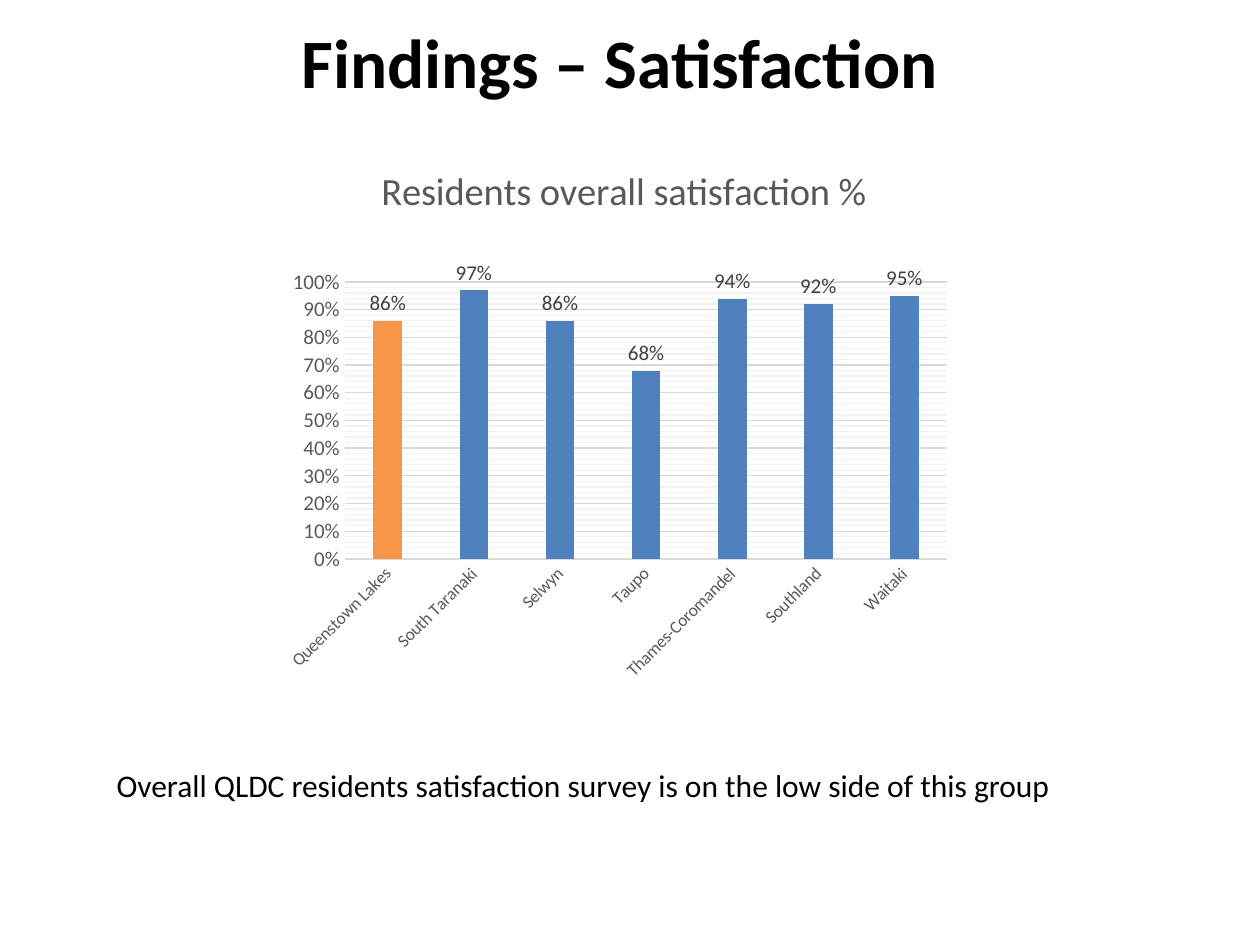
from copy import deepcopy

from lxml import etree
from pptx import Presentation
from pptx import util as u
from pptx.chart import data as chart_data
from pptx.dml.color import RGBColor
from pptx.enum import chart as ch, text
from pptx.oxml import ns

FONT = "Calibri"
HEADING = "Findings – Satisfaction"
REMARK = "Overall QLDC residents satisfaction survey is on the low side of this group"
CHART_TITLE = "Residents overall satisfaction %"
SATISFACTION = {
    "Queenstown Lakes": 0.86,
    "South Taranaki": 0.97,
    "Selwyn": 0.86,
    "Taupo": 0.68,
    "Thames-Coromandel": 0.94,
    "Southland": 0.92,
    "Waitaki": 0.95,
}
HIGHLIGHTED = "Queenstown Lakes"
BAR, HIGHLIGHT = "4F81BD", "F79646"
GREY, LABEL_GREY, GRID, MINOR_GRID = "595959", "404040", "D9D9D9", "F2F2F2"


def rgb(value):
    return RGBColor.from_string(value)


def style_font(font, size, color, bold=False):
    font.name, font.size, font.bold = FONT, u.Pt(size), bold
    font.color.rgb = rgb(color)


def style_line(line, color):
    line.color.rgb = rgb(color)
    line.width = u.Pt(0.75)


def add_text(slide, content, box, size, color="000000", bold=False,
             align=text.PP_ALIGN.LEFT, anchor=text.MSO_ANCHOR.TOP):
    frame = slide.shapes.add_textbox(*map(u.Cm, box)).text_frame
    frame.word_wrap = True
    frame.vertical_anchor = anchor
    paragraph = frame.paragraphs[0]
    paragraph.alignment = align
    run = paragraph.add_run()
    run.text = content
    style_font(run.font, size, color, bold)


def place(parent, position, **settings):
    """Give a chart title or plot area a manual layout, in fractions of the chart."""
    for old in parent.findall(ns.qn("c:layout")):
        parent.remove(old)
    layout = etree.Element(ns.qn("c:layout"))
    manual = etree.SubElement(layout, ns.qn("c:manualLayout"))
    entries = {**settings, "xMode": "edge", "yMode": "edge", **position}
    for key, value in entries.items():
        etree.SubElement(manual, ns.qn(f"c:{key}")).set("val", str(value))
    title_text = parent.find(ns.qn("c:tx"))
    parent.insert(0 if title_text is None else 1, layout)


def style_gridlines(axis, major_color, minor_color):
    axis.has_major_gridlines = axis.has_minor_gridlines = True
    style_line(axis.major_gridlines.format.line, major_color)
    major = axis._element.find(ns.qn("c:majorGridlines"))
    minor = axis._element.find(ns.qn("c:minorGridlines"))
    minor.append(deepcopy(major.find(ns.qn("c:spPr"))))
    for color in minor.iter(ns.qn("a:srgbClr")):
        color.set("val", minor_color)


def add_satisfaction_chart(slide, box):
    data = chart_data.CategoryChartData(number_format="0%")
    data.categories = list(SATISFACTION)
    data.add_series("Series 1", list(SATISFACTION.values()))
    chart = slide.shapes.add_chart(
        ch.XL_CHART_TYPE.COLUMN_CLUSTERED, *map(u.Cm, box), data).chart
    style_font(chart.font, 10, "000000")
    chart.has_legend = False

    chart.has_title = True
    title_run = chart.chart_title.text_frame.paragraphs[0].add_run()
    title_run.text = CHART_TITLE
    style_font(title_run.font, 22, GREY)
    place(chart.chart_title._element, {"x": 0.19, "y": 0.04})

    plot = chart.plots[0]
    plot.gap_width = 199
    plot.vary_by_categories = False
    place(plot._element.getparent(), {"x": 0.15, "y": 0.26, "w": 0.81, "h": 0.49},
          layoutTarget="inner")

    bars = plot.series[0]
    highlighted_bar = bars.points[list(SATISFACTION).index(HIGHLIGHTED)]
    for part, color in ((bars, BAR), (highlighted_bar, HIGHLIGHT)):
        part.format.fill.solid()
        part.format.fill.fore_color.rgb = rgb(color)

    labels = bars.data_labels
    labels.show_value = True
    labels.position = ch.XL_LABEL_POSITION.OUTSIDE_END
    labels.number_format, labels.number_format_is_linked = "0%", False
    style_font(labels.font, 12, LABEL_GREY)

    districts, percent = chart.category_axis, chart.value_axis
    for axis, size in ((districts, 10), (percent, 12)):
        axis.major_tick_mark = axis.minor_tick_mark = ch.XL_TICK_MARK.NONE
        style_font(axis.tick_labels.font, size, GREY)
    style_line(districts.format.line, GRID)
    districts._element.find(ns.qn("c:txPr")).find(ns.qn("a:bodyPr")).set("rot", "-2700000")

    percent.minimum_scale, percent.maximum_scale = 0, 1
    percent.major_unit, percent.minor_unit = 0.1, 0.02
    percent.tick_labels.number_format = "0%"
    percent.tick_labels.number_format_is_linked = False
    percent.format.line.fill.background()
    style_gridlines(percent, GRID, MINOR_GRID)


def main():
    deck = Presentation()
    deck.slide_width, deck.slide_height = u.Cm(25.4), u.Cm(19.05)
    slide = deck.slides.add_slide(deck.slide_layouts[6])
    add_text(slide, HEADING, (1.7, 0.53, 21.6, 1.4), 39.6, bold=True,
             align=text.PP_ALIGN.CENTER, anchor=text.MSO_ANCHOR.MIDDLE)
    add_satisfaction_chart(slide, (4.7, 2.72, 15, 11.4))
    add_text(slide, REMARK, (2.1, 15.32, 22.2, 1.02), 18)
    deck.save("out.pptx")


if __name__ == "__main__":
    main()
